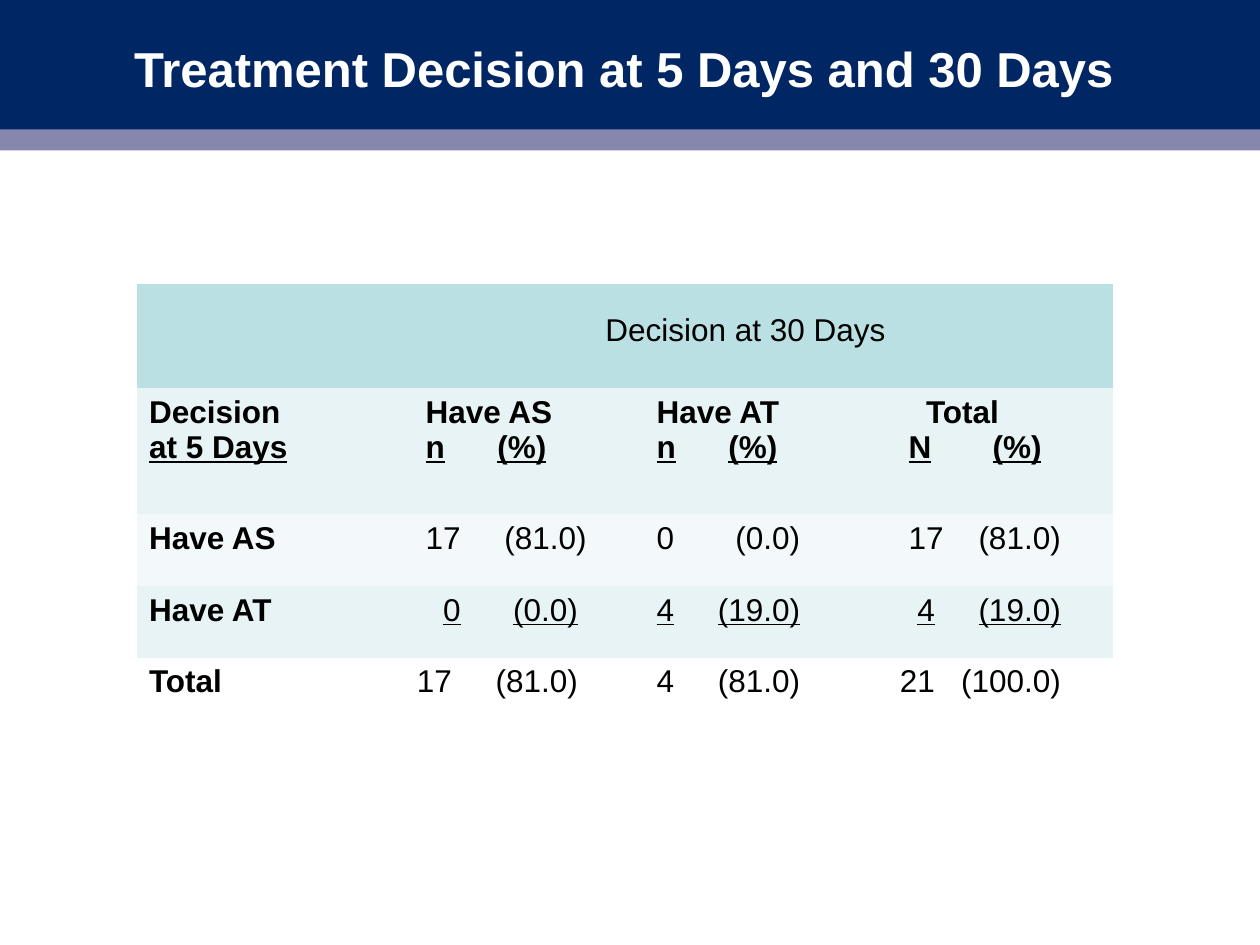
from lxml import etree
from pptx import Presentation
from pptx import util as u
from pptx.dml import color
from pptx.enum import shapes, text
from pptx.oxml import ns

COLORS = {"navy": "002664", "lilac": "8787AD", "head": "BBE0E3", "mid": "E7F3F4",
          "pale": "F3F9FA", "white": "FFFFFF", "black": "000000"}
NO_STYLE = "{2D5ABB26-0587-4C30-8999-92F81FD0307C}"
COLUMN_WIDTHS = [138, 132, 149, 139]
ROW_HEIGHTS = [60, 72, 41, 41, 41]
ROW_FILLS = ["head", "mid", "pale", "mid", "white"]
HEADINGS = [("Have AS", 20, "n", 20, 61), ("Have AT", 20, "n", 20, 61),
            ("Total", 25, "N", 15, 63)]
RESULTS = [
    ("Have AS", False, [("17", "(81.0)", 20, 65), ("0", "(0.0)", 20, 65),
                        ("17", "(81.0)", 15, 55)]),
    ("Have AT", True, [("0", "(0.0)", 30, 70), ("4", "(19.0)", 20, 55),
                       ("4", "(19.0)", 20, 55)]),
    ("Total", False, [("17", "(81.0)", 15, 60), ("4", "(81.0)", 20, 55),
                      ("21", "(100.0)", 10, 45)]),
]


def rgb(name):
    """Return the named palette colour."""
    return color.RGBColor.from_string(COLORS[name])


def write(para, words, size=18, ink="black", bold=False, underline=False, align=None):
    """Add one formatted run to a paragraph."""
    span = para.add_run()
    span.text = words
    span.font.name, span.font.size = "Arial", u.Pt(size)
    span.font.bold, span.font.underline = bold, underline
    span.font.color.rgb = rgb(ink)
    if align is not None:
        para.alignment = align


def set_tabs(para, *stops):
    """Give a paragraph left tab stops, in points."""
    tab_list = etree.SubElement(para._p.get_or_add_pPr(), ns.qn("a:tabLst"))
    for stop in stops:
        etree.SubElement(tab_list, ns.qn("a:tab"), pos=str(u.Pt(stop)), algn="l")


def add_banner(page, left, top, width, height):
    """Draw the two-tone banner and set the title on it."""
    title = page.shapes.title
    for offset, fill in [(12, "lilac"), (0, "navy")]:
        band = page.shapes.add_shape(shapes.MSO_SHAPE.RECTANGLE, u.Pt(left),
                                     u.Pt(top + offset), u.Pt(width), u.Pt(height - 12))
        band.shadow.inherit = False
        band.fill.solid()
        band.fill.fore_color.rgb = rgb(fill)
        band.line.fill.background()
        title._element.addprevious(band._element)
    title.left, title.top = u.Pt(left), u.Pt(top + 12)
    title.width, title.height = u.Pt(width), u.Pt(54)
    frame = title.text_frame
    frame.margin_left = 0
    frame.vertical_anchor = text.MSO_ANCHOR.MIDDLE
    write(frame.paragraphs[0], "Treatment Decision at 5 Days and 30 Days", size=28,
          ink="white", bold=True, align=text.PP_ALIGN.CENTER)


def fill_headings(table):
    """Write the spanning heading and the column headings."""
    spanning = table.cell(0, 1)
    spanning.merge(table.cell(0, 3))
    spanning.margin_top = u.Pt(17)
    write(spanning.text_frame.paragraphs[0], "Decision at 30 Days",
          align=text.PP_ALIGN.CENTER)
    label = table.cell(1, 0).text_frame
    write(label.paragraphs[0], "Decision", bold=True)
    write(label.add_paragraph(), "at 5 Days", bold=True, underline=True)
    for column, (name, name_stop, count, *stops) in enumerate(HEADINGS, 1):
        frame = table.cell(1, column).text_frame
        set_tabs(frame.paragraphs[0], name_stop)
        write(frame.paragraphs[0], f"\t{name}", bold=True)
        units = frame.add_paragraph()
        set_tabs(units, *stops)
        write(units, "\t", bold=True)
        write(units, f"{count}\t(%)", bold=True, underline=True)


def add_decision_table(page, left, top):
    """Place the table of decisions at 5 and 30 days."""
    holder = page.shapes.add_table(len(ROW_HEIGHTS), len(COLUMN_WIDTHS), u.Pt(left), u.Pt(top),
                                   u.Pt(sum(COLUMN_WIDTHS)), u.Pt(sum(ROW_HEIGHTS)))
    table = holder.table
    table.first_row = table.horz_banding = False
    table._tbl.tblPr.find(ns.qn("a:tableStyleId")).text = NO_STYLE
    for column, width in zip(table.columns, COLUMN_WIDTHS):
        column.width = u.Pt(width)
    for row, height, fill in zip(table.rows, ROW_HEIGHTS, ROW_FILLS):
        row.height = u.Pt(height)
        for cell in row.cells:
            cell.fill.solid()
            cell.fill.fore_color.rgb = rgb(fill)
    fill_headings(table)
    for row, (name, underline, values) in enumerate(RESULTS, 2):
        write(table.cell(row, 0).text_frame.paragraphs[0], name, bold=True)
        for column, (count, percent, *stops) in enumerate(values, 1):
            para = table.cell(row, column).text_frame.paragraphs[0]
            set_tabs(para, *stops)
            write(para, f"\t{count}\t{percent}", underline=underline)


def main():
    """Build and save the deck."""
    deck = Presentation()
    deck.slide_width, deck.slide_height = u.Pt(720), u.Pt(540)
    page = deck.slides.add_slide(deck.slide_layouts[5])
    add_banner(page, 0, 0, 720, 86)
    add_decision_table(page, 78, 162)
    deck.save("out.pptx")


if __name__ == "__main__":
    main()
